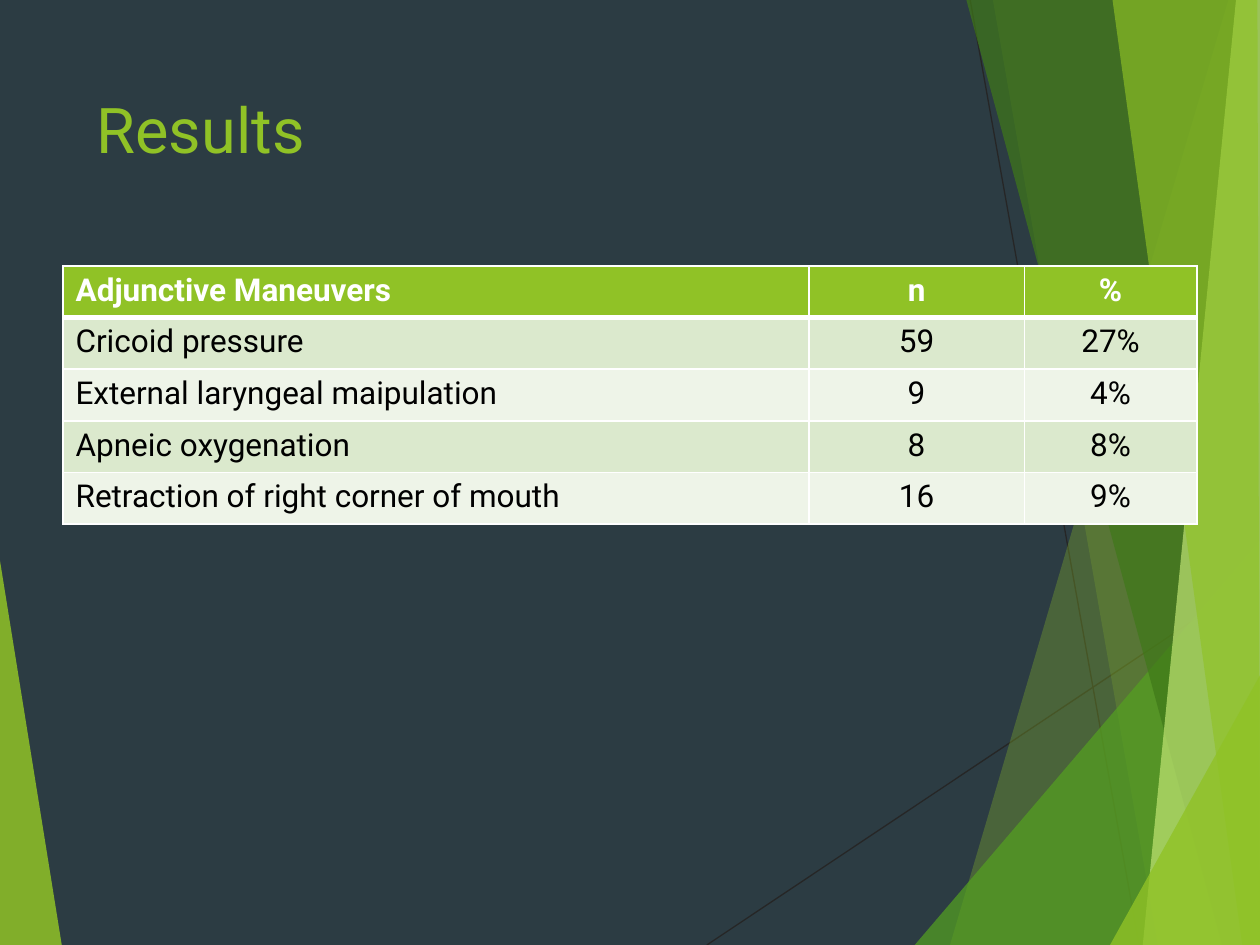
from pptx import Presentation
from pptx.dml.color import RGBColor
from pptx.enum.shapes import MSO_CONNECTOR
from pptx.enum.text import MSO_ANCHOR, PP_ALIGN
from pptx.oxml.ns import qn
from pptx.util import Inches, Pt
from lxml.etree import SubElement

GREEN, DARK, WHITE, BLACK = "90C226", "262626", "FFFFFF", "000000"
BAND_FILLS = ["DBE9CD", "EEF4E8"]

RAYS = [
    ((5.61, 7.5), (10, 4.57)),
    ((7.7, 0), (9.04, 7.5)),
]
# Corner points, colour, opacity in percent
SHARDS = [
    ([(0, 4.45), (0.49, 7.5), (0, 7.5)], GREEN, 85),
    ([(9.75, 0), (7.54, 7.5), (10, 7.5), (10, 0)], GREEN, 30),
    ([(7.88, 0), (9.19, 7.5), (10, 7.5), (10, 0)], GREEN, 20),
    ([(7.26, 7.5), (10, 4.29), (10, 7.5)], "54A021", 72),
    ([(7.67, 0), (9.7, 7.5), (10, 7.5), (10, 0)], "3F7819", 70),
    ([(9.81, 0), (9.07, 7.5), (10, 7.5), (10, 0)], "C0E474", 70),
    ([(8.83, 0), (9.86, 7.5), (10, 7.5), (9.98, 0)], GREEN, 65),
    ([(8.81, 7.5), (10, 5.36), (10, 7.5)], GREEN, 80),
]
COLUMN_WIDTHS = [5.92, 1.71, 1.37]
ROW_HEIGHT = 0.41
MANEUVERS = [
    ["Adjunctive Maneuvers", "n", "%"],
    ["Cricoid pressure", "59", "27%"],
    ["External laryngeal maipulation", "9", "4%"],
    ["Apneic oxygenation", "8", "8%"],
    ["Retraction of right corner of mouth", "16", "9%"],
]


def rgb(color):
    return RGBColor.from_string(color)


class SlideBuilder:
    font_name = "Roboto"

    def __init__(self, page):
        self.page = page

    def background(self, color):
        fill = self.page.background.fill
        fill.solid()
        fill.fore_color.rgb = rgb(color)

    def line(self, start, end, color, width=0.75):
        ends = [Inches(value) for value in (*start, *end)]
        line = self.page.shapes.add_connector(MSO_CONNECTOR.STRAIGHT, *ends)
        line.line.color.rgb = rgb(color)
        line.line.width = Pt(width)
        SubElement(line._element.spPr, qn("a:effectLst"))

    def polygon(self, points, color, opacity):
        corners = [(Inches(x), Inches(y)) for x, y in points]
        builder = self.page.shapes.build_freeform(*corners[0])
        builder.add_line_segments(corners[1:], close=True)
        shape = builder.convert_to_shape()
        shape.shadow.inherit = False
        shape.line.fill.background()
        shape.fill.solid()
        shape.fill.fore_color.rgb = rgb(color)
        tint = shape._element.spPr.find(qn("a:solidFill"))[0]
        SubElement(tint, qn("a:alpha"), val=str(opacity * 1000))

    def style(self, para, size, color, bold=False):
        font = para.font
        font.name, font.size, font.bold = self.font_name, Pt(size), bold
        font.color.rgb = rgb(color)

    def title(self, text, left, top, width, height):
        box = self.page.shapes.add_textbox(
            Inches(left), Inches(top), Inches(width), Inches(height))
        box.text_frame.word_wrap = True
        box.text_frame.text = text
        self.style(box.text_frame.paragraphs[0], 36, GREEN)

    def borders(self, cell, **widths):
        """Draw white borders; widths are in points, keyed L, R, T, B."""
        properties = cell._tc.get_or_add_tcPr()
        for side, width in widths.items():
            edge = SubElement(properties, qn(f"a:ln{side}"), w=str(Pt(width)))
            SubElement(SubElement(edge, qn("a:solidFill")),
                       qn("a:srgbClr"), val=WHITE)

    def table(self, rows, left, top, widths, row_height):
        table = self.page.shapes.add_table(
            len(rows), len(widths), Inches(left), Inches(top),
            Inches(sum(widths)), Inches(row_height * len(rows))).table
        for column, width in zip(table.columns, widths):
            column.width = Inches(width)
        for r, row in enumerate(rows):
            header = r == 0
            for c, text in enumerate(row):
                cell = table.cell(r, c)
                self.borders(cell, L=1, R=1, T=3 if r == 1 else 1,
                             B=3 if header else 1)
                cell.fill.solid()
                cell.fill.fore_color.rgb = rgb(
                    GREEN if header else BAND_FILLS[(r - 1) % 2])
                cell.vertical_anchor = MSO_ANCHOR.TOP
                cell.text = text
                para = cell.text_frame.paragraphs[0]
                para.alignment = PP_ALIGN.CENTER if c else PP_ALIGN.LEFT
                self.style(para, 18, WHITE if header else BLACK, header)


def main():
    deck = Presentation()
    deck.slide_width, deck.slide_height = Inches(10), Inches(7.5)
    slide = SlideBuilder(deck.slides.add_slide(deck.slide_layouts[6]))
    slide.background("2C3C43")
    for start, end in RAYS:
        slide.line(start, end, DARK)
    for points, color, opacity in SHARDS:
        slide.polygon(points, color, opacity)
    slide.title("Results", 0.67, 0.67, 6.94, 1.44)
    slide.table(MANEUVERS, 0.5, 2.11, COLUMN_WIDTHS, ROW_HEIGHT)
    deck.save("out.pptx")


if __name__ == "__main__":
    main()
